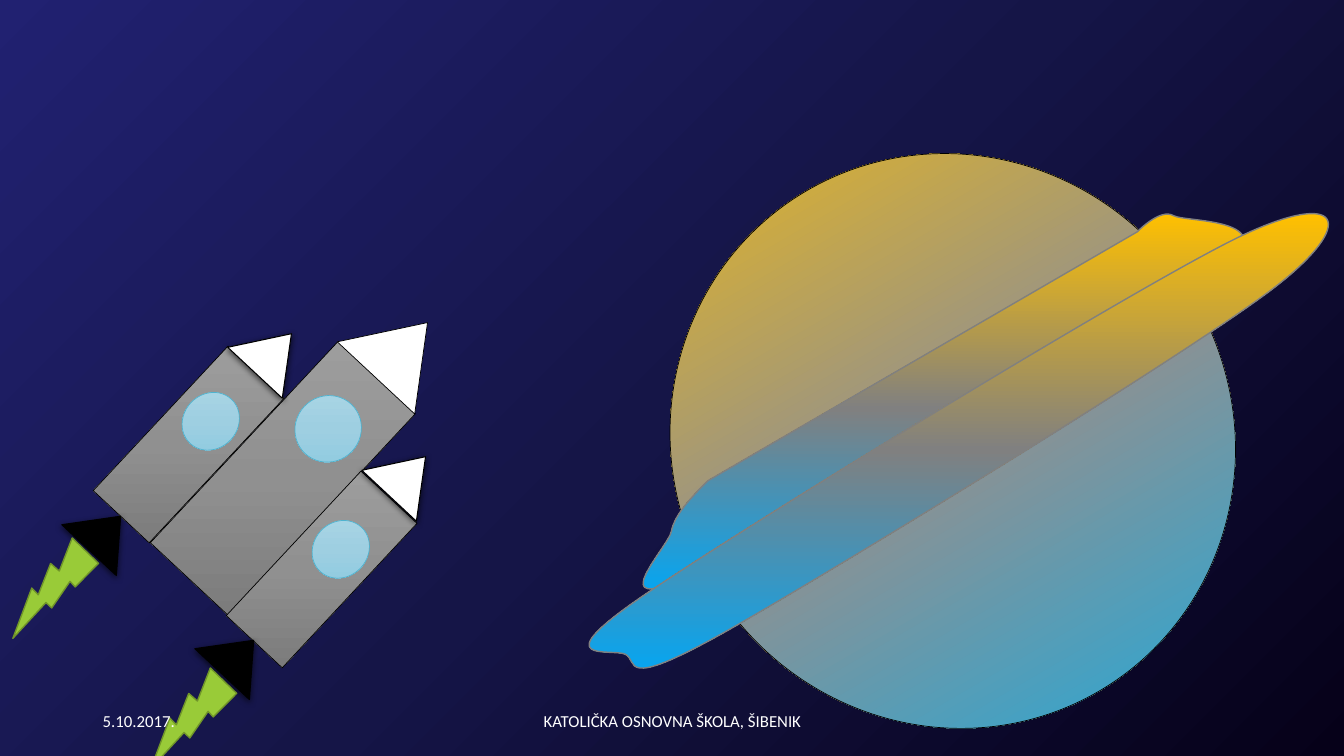
from lxml import etree
from pptx import Presentation
from pptx import util as u
from pptx.dml.color import RGBColor
from pptx.enum import shapes, text
from pptx.oxml.ns import qn

COLORS = {
    "white": "FFFFFF", "black": "000000", "ring line": "808080",
    "window line": "4EB3CF", "flame": "99CB38", "flame line": "719629",
}
SKY = [(0, "212171"), (51, "151547"), (100, "060119")]
PLANET = [(0, "FFC000"), (50, "909090"), (100, "00B0F0")]
RING = [(0, "FFC000"), (52, "808080"), (100, "08A5EF")]
METAL = [(0, "9D9D9D"), (50, "909090"), (100, "7C7C7C")]
GLASS = [(0, "ACD6E6"), (50, "9ECFE1"), (100, "8CCAE0")]
SHAPE = shapes.MSO_SHAPE
ROCKET_TILT = 43
FLAME_TILT = 74.3


class SpaceSlide:
    """Holds the text style, the slide and the group being drawn."""

    font_name = "Calibri"
    font_size = u.Pt(12)

    def __init__(self, presentation):
        self.slide = presentation.slides.add_slide(presentation.slide_layouts[6])
        self.target = self.slide.shapes

    def start_group(self):
        self.target = self.slide.shapes.add_group_shape().shapes

    def gradient(self, fill, parent, stops, angle, rotates=False):
        fill.gradient()
        element = parent.find(".//" + qn("a:gradFill"))
        element.set("rotWithShape", str(int(rotates)))
        stop_list = element.find(qn("a:gsLst"))
        for stop in list(stop_list):
            stop_list.remove(stop)
        for position, color in stops:
            stop = etree.SubElement(stop_list, qn("a:gs"), pos=str(position * 1000))
            etree.SubElement(stop, qn("a:srgbClr"), val=color)
        element.find(qn("a:lin")).set("ang", str(angle * 60000))

    def background(self, stops, angle):
        self.gradient(self.slide.background.fill, self.slide.element, stops, angle)

    def style(self, shape, fill, line, width, rotates=False):
        shape.shadow.inherit = False
        if isinstance(fill, list):
            self.gradient(shape.fill, shape.element, fill, 90, rotates)
        else:
            shape.fill.solid()
            shape.fill.fore_color.rgb = RGBColor.from_string(COLORS[fill])
        shape.line.color.rgb = RGBColor.from_string(COLORS[line])
        shape.line.width = u.Pt(width)

    def preset(self, kind, box, tilt, fill, line="black", width=0.5,
               rotates=False, shadow=False):
        shape = self.target.add_shape(kind, *map(u.Inches, box))
        shape.rotation = tilt
        self.style(shape, fill, line, width, rotates)
        if shadow:
            self.drop_shadow(shape)

    def drop_shadow(self, shape):
        effects = shape.element.find(".//" + qn("a:effectLst"))
        outer = etree.SubElement(
            effects, qn("a:outerShdw"), blurRad=str(u.Pt(4.5)),
            dist=str(u.Pt(1.5)), dir="5400000", rotWithShape="0")
        color = etree.SubElement(outer, qn("a:srgbClr"), val=COLORS["black"])
        etree.SubElement(color, qn("a:alpha"), val="63000")

    def curve(self, box, points, fill, line):
        """Closed outline: a start point, then three points per Bezier curve."""
        points = [(u.Inches(x), u.Inches(y)) for x, y in points]
        builder = self.target.build_freeform(*points[0], scale=1.0)
        builder.add_line_segments(points[1:], close=True)
        shape = builder.convert_to_shape()
        outline = shape.element.find(".//" + qn("a:path"))
        left, top, width, height = map(u.Inches, box)

        # Measure the points from the visible frame
        for point in outline.iter(qn("a:pt")):
            point.set("x", str(int(point.get("x")) + shape.left - left))
            point.set("y", str(int(point.get("y")) + shape.top - top))
        outline.set("w", str(width))
        outline.set("h", str(height))
        shape.left, shape.top, shape.width, shape.height = left, top, width, height

        # Join each three segments into one curve
        segments = outline.findall(qn("a:lnTo"))
        for first in range(0, len(segments), 3):
            bezier = etree.Element(qn("a:cubicBezTo"))
            segments[first].addprevious(bezier)
            for segment in segments[first:first + 3]:
                bezier.append(segment[0])
                outline.remove(segment)
        self.style(shape, fill, line, 1)

    def label(self, box, words, align):
        frame = self.slide.shapes.add_textbox(*map(u.Inches, box)).text_frame
        frame.word_wrap = True
        frame.vertical_anchor = text.MSO_ANCHOR.MIDDLE
        paragraph = frame.paragraphs[0]
        paragraph.alignment = align
        run = paragraph.add_run()
        run.text = words
        run.font.name = self.font_name
        run.font.size = self.font_size
        run.font.color.rgb = RGBColor.from_string(COLORS["white"])


def main():
    presentation = Presentation()
    presentation.slide_width = u.Inches(13.33)
    presentation.slide_height = u.Inches(7.5)
    space = SpaceSlide(presentation)
    space.background(SKY, 45)

    # Planet with its back and front rings
    space.start_group()
    space.preset(SHAPE.OVAL, (6.67, 1.5, 5.56, 5.75), 329.8, PLANET, rotates=True)
    back_ring = [
        (7.02, 4.77), (6.85, 4.94), (6.69, 5.11), (6.66, 5.27),
        (6.63, 5.43), (5.94, 6.13), (6.84, 5.71),
        (7.74, 5.29), (11.25, 3.34), (12.05, 2.75),
        (12.85, 2.15), (11.77, 2.21), (11.64, 2.14),
        (11.51, 2.06), (11.28, 2.3), (11.28, 2.3)]
    front_ring = [
        (6.38, 5.91), (5.37, 6.6), (6.07, 6.43), (6.2, 6.49),
        (6.34, 6.55), (6.12, 6.87), (7.19, 6.27),
        (8.27, 5.66), (11.78, 3.51), (12.63, 2.86),
        (13.48, 2.21), (13.32, 1.85), (12.27, 2.36),
        (11.23, 2.87), (7.39, 5.22), (6.38, 5.91)]
    space.curve((6.38, 2.12, 5.96, 3.72), back_ring, RING, "ring line")
    space.curve((5.84, 2.12, 7.33, 4.51), front_ring, RING, "ring line")

    # Rocket bodies
    space.start_group()
    for body in [(2.28, 3.38, 1.05, 2.73), (1.49, 3.43, 0.76, 1.96),
                 (2.81, 4.67, 0.76, 1.96)]:
        space.preset(SHAPE.RECTANGLE, body, ROCKET_TILT, METAL)

    # Engines
    for left, top in [(0.67, 5.06), (1.99, 6.29)]:
        space.preset(SHAPE.ISOSCELES_TRIANGLE, (left, top, 0.74, 0.46),
                     ROCKET_TILT, "black", width=0.75, shadow=True)

    # Nose cones
    space.preset(SHAPE.ISOSCELES_TRIANGLE, (3.46, 3.1, 1.05, 0.75),
                 ROCKET_TILT, "white")
    for left, top in [(2.34, 3.24), (3.67, 4.46)]:
        space.preset(SHAPE.ISOSCELES_TRIANGLE, (left, top, 0.74, 0.53),
                     ROCKET_TILT, "white", width=0.75, shadow=True)

    # Windows
    for window in [(2.93, 3.92, 0.65, 0.67), (1.82, 3.88, 0.54, 0.6),
                   (3.11, 5.15, 0.54, 0.6)]:
        space.preset(SHAPE.OVAL, window, ROCKET_TILT, GLASS, "window line")

    # Flames
    for left, top in [(0.11, 5.3), (1.48, 6.59)]:
        space.preset(SHAPE.LIGHTNING_BOLT, (left, top, 0.8, 1.02), FLAME_TILT,
                     "flame", "flame line", 1)

    # Date and footer
    space.label((0.92, 6.95, 3, 0.4), "5.10.2017.", text.PP_ALIGN.LEFT)
    space.label((4.42, 6.95, 4.5, 0.4), "KATOLIČKA OSNOVNA ŠKOLA, ŠIBENIK",
                text.PP_ALIGN.CENTER)

    presentation.save("out.pptx")


if __name__ == "__main__":
    main()
